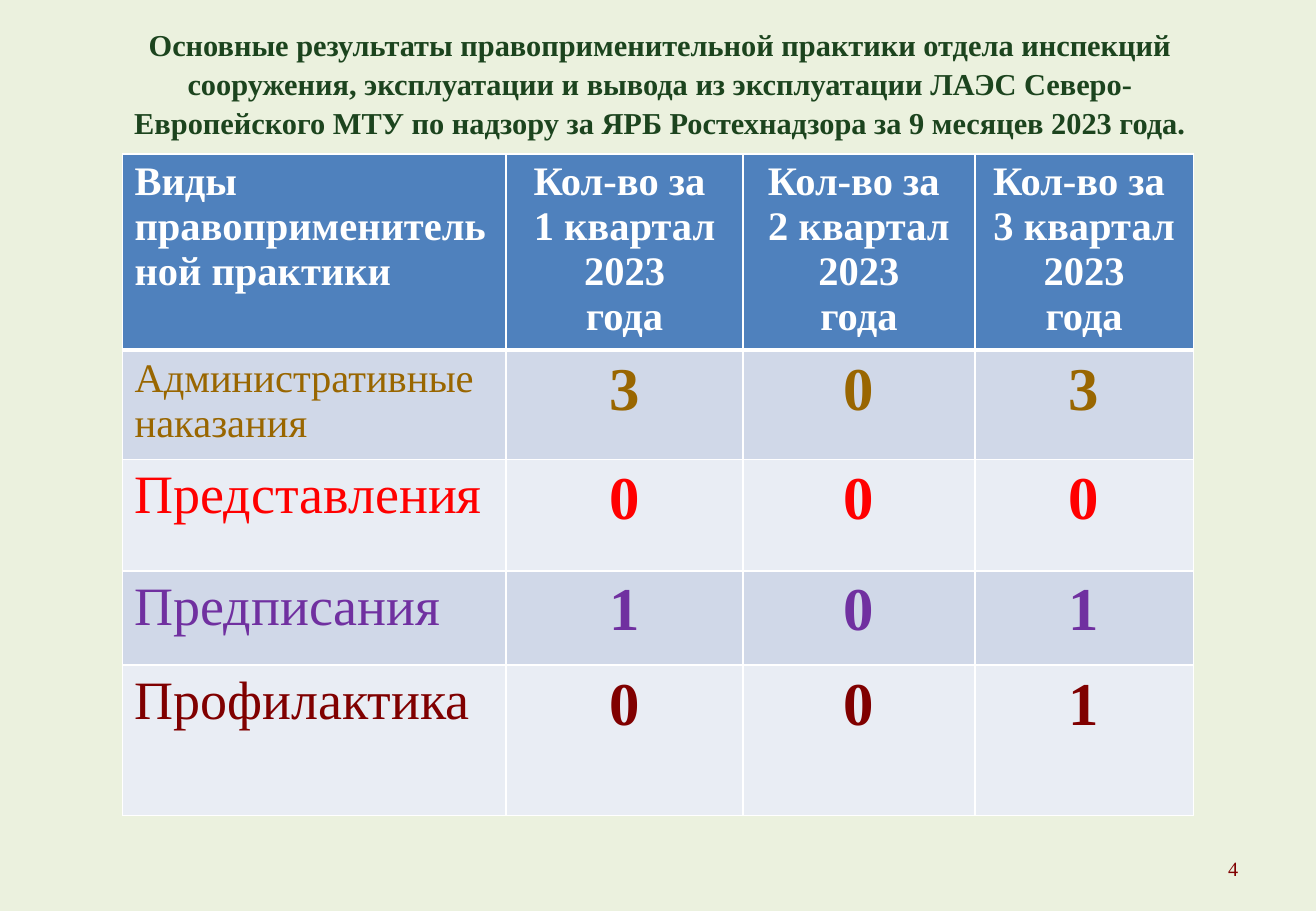
import dataclasses

import lxml.etree
import pptx
import pptx.dml.color
import pptx.enum.text
import pptx.oxml.ns
import pptx.util

EMU_PER_PX = 7620
ALIGN = pptx.enum.text.PP_ALIGN
ANCHOR = pptx.enum.text.MSO_ANCHOR


@dataclasses.dataclass(frozen=True)
class Theme:
    font: str = "Times New Roman"
    background: str = "EBF1DE"
    title: str = "1C441E"
    header_fill: str = "4F81BD"
    band_fills: tuple = ("D0D8E8", "E9EDF4")
    white: str = "FFFFFF"
    ochre: str = "996600"
    red: str = "FF0000"
    purple: str = "7030A0"
    maroon: str = "800000"
    title_size: int = 18
    header_size: int = 24
    label_size: int = 32
    count_size: int = 36
    number_size: int = 12


THEME = Theme()
TITLE = (
    "Основные результаты правоприменительной практики отдела инспекций "
    "сооружения, эксплуатации и вывода из эксплуатации ЛАЭС Северо-Европейского "
    "МТУ по надзору за ЯРБ Ростехнадзора за 9 месяцев 2023 года."
)
COLUMN_WIDTHS = (379, 234, 229, 216)
ROW_HEIGHTS = (194, 108, 110, 93, 149)
PRACTICES = (
    ("Административные наказания", THEME.header_size, THEME.ochre, (3, 0, 3)),
    ("Представления", THEME.label_size, THEME.red, (0, 0, 0)),
    ("Предписания", THEME.label_size, THEME.purple, (1, 0, 1)),
    ("Профилактика", THEME.label_size, THEME.maroon, (0, 0, 1)),
)


def px(length):
    return pptx.util.Emu(length * EMU_PER_PX)


def rgb(color):
    return pptx.dml.color.RGBColor.from_string(color)


def paint(fill, color):
    fill.solid()
    fill.fore_color.rgb = rgb(color)


def write(text_frame, text, size, color, bold=False, align=ALIGN.LEFT):
    text_frame.text = text
    text_frame.word_wrap = True
    for paragraph in text_frame.paragraphs:
        paragraph.alignment = align
        paragraph.font.name = THEME.font
        paragraph.font.size = pptx.util.Pt(size)
        paragraph.font.bold = bold
        paragraph.font.color.rgb = rgb(color)


def set_borders(cell, bottom_width, top_width):
    properties = cell._tc.get_or_add_tcPr()
    widths = (("lnL", 1), ("lnR", 1), ("lnT", top_width), ("lnB", bottom_width))
    for position, (tag, width) in enumerate(widths):
        line = lxml.etree.Element(pptx.oxml.ns.qn(f"a:{tag}"), w=str(pptx.util.Pt(width)))
        fill = lxml.etree.SubElement(line, pptx.oxml.ns.qn("a:solidFill"))
        lxml.etree.SubElement(fill, pptx.oxml.ns.qn("a:srgbClr"), val=THEME.white)
        properties.insert(position, line)


def fill_cell(cell, row, text, size, color, bold, align):
    write(cell.text_frame, text, size, color, bold, align)
    paint(cell.fill, THEME.band_fills[(row - 1) % 2] if row else THEME.header_fill)
    set_borders(cell, 1 if row else 3, 3 if row == 1 else 1)


def add_title(slide):
    title = slide.shapes.title
    title.left, title.top, title.width, title.height = map(px, (112, 25, 1080, 112))
    write(title.text_frame, TITLE, THEME.title_size, THEME.title, True, ALIGN.CENTER)
    title.text_frame.auto_size = pptx.enum.text.MSO_AUTO_SIZE.NONE
    title.text_frame.vertical_anchor = ANCHOR.MIDDLE
    title.text_frame.paragraphs[0].line_spacing = 1.08


def add_results_table(slide):
    table = slide.shapes.add_table(
        len(ROW_HEIGHTS), len(COLUMN_WIDTHS), px(121), px(152),
        px(sum(COLUMN_WIDTHS)), px(sum(ROW_HEIGHTS)),
    ).table
    for column, width in zip(table.columns, COLUMN_WIDTHS):
        column.width = px(width)
    for row, height in zip(table.rows, ROW_HEIGHTS):
        row.height = px(height)
    fill_cell(table.cell(0, 0), 0, "Виды правоприменительной практики",
              THEME.header_size, THEME.white, True, ALIGN.LEFT)
    for quarter in range(1, len(COLUMN_WIDTHS)):
        fill_cell(table.cell(0, quarter), 0, f"Кол-во за \n{quarter} квартал\n2023\nгода",
                  THEME.header_size, THEME.white, True, ALIGN.CENTER)
    for row, (label, size, color, counts) in enumerate(PRACTICES, 1):
        fill_cell(table.cell(row, 0), row, label, size, color, False, ALIGN.LEFT)
        for quarter, count in enumerate(counts, 1):
            fill_cell(table.cell(row, quarter), row, str(count),
                      THEME.count_size, color, True, ALIGN.CENTER)


def add_slide_number(slide):
    text_frame = slide.shapes.add_textbox(px(931), px(834), px(304), px(48)).text_frame
    write(text_frame, "4", THEME.number_size, THEME.maroon, align=ALIGN.RIGHT)
    text_frame.vertical_anchor = ANCHOR.MIDDLE


def main():
    presentation = pptx.Presentation()
    presentation.slide_width = px(1300)
    presentation.slide_height = px(900)
    slide = presentation.slides.add_slide(presentation.slide_layouts.get_by_name("Title Only"))
    paint(slide.background.fill, THEME.background)
    add_title(slide)
    add_results_table(slide)
    add_slide_number(slide)
    presentation.save("out.pptx")


if __name__ == "__main__":
    main()
